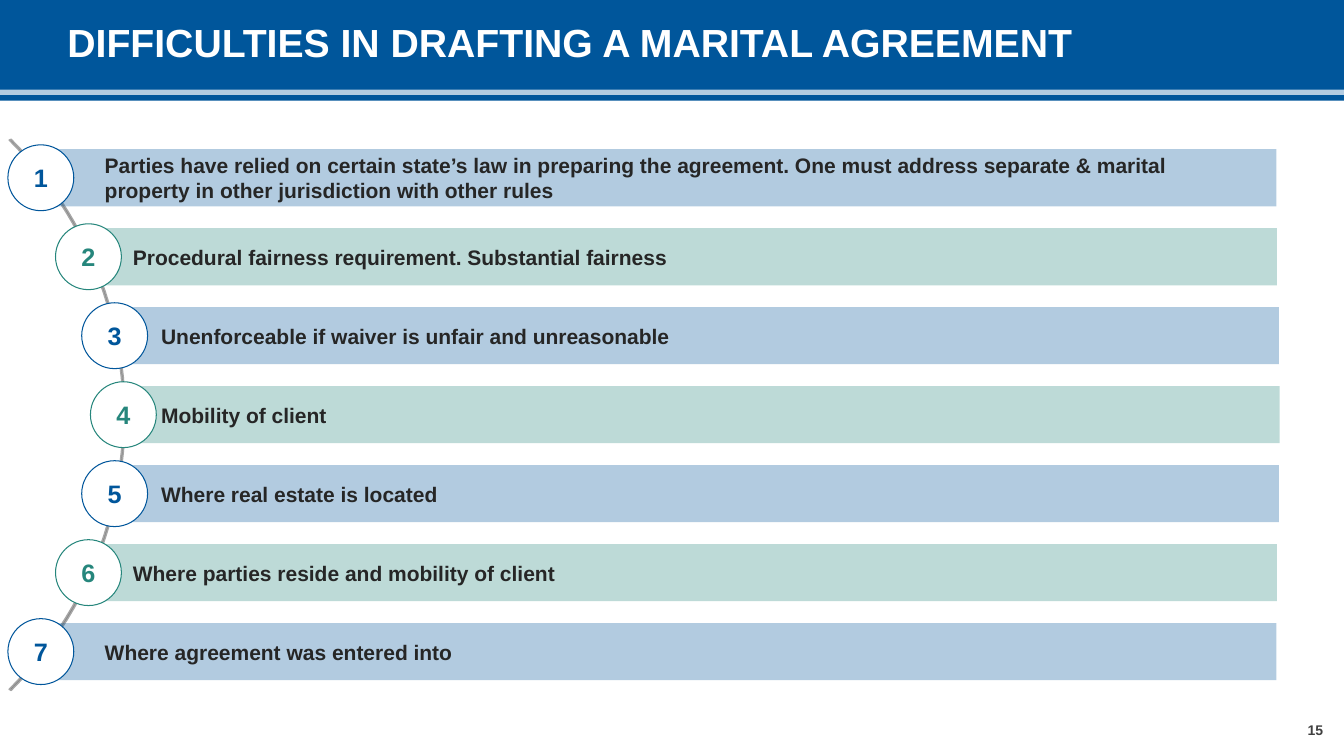
from dataclasses import dataclass
from typing import Any

import lxml.etree
import pptx
import pptx.dml.color
import pptx.enum.shapes
import pptx.enum.text
import pptx.oxml.ns
import pptx.util

Cm = pptx.util.Cm
Pt = pptx.util.Pt
SHAPE = pptx.enum.shapes.MSO_SHAPE
ALIGN = pptx.enum.text.PP_ALIGN
MIDDLE = pptx.enum.text.MSO_ANCHOR.MIDDLE

COLORS = {
    "blue": "00569B",
    "green": "26867C",
    "white": "FFFFFF",
    "ink": "262626",
    "page": "404040",
    "arc": "808080",
    "arc_edge": "A6A6A6",
}

SLIDE_WIDTH, SLIDE_HEIGHT = 33.87, 19.05
FIRST_CENTER, STEP = 4.48, 1.99
BAR_HEIGHT, BADGE_SIZE = 1.44, 1.66
BAR_OPACITY = 30
ARC_STEPS = 48
ARC_OUTER = [(0.28, 3.51), (4.11, 7.34), (4.11, 13.57), (0.28, 17.4)]
ARC_INNER = [(0.23, 17.37), (4.06, 13.54), (4.06, 7.37), (0.23, 3.53)]


@dataclass(frozen=True)
class Indent:
    """Horizontal places, in cm, of one depth along the arc."""
    badge_center: float
    bar_right: float
    text_left: float


@dataclass(frozen=True)
class Difficulty:
    text: str
    indent: Indent
    text_width: float = 28.73


OUTER = Indent(1.03, 32.17, 2.39)
SECOND = Indent(2.23, 32.18, 3.1)
THIRD = Indent(2.89, 32.23, 3.81)
CENTER = Indent(3.11, 32.25, 3.81)

DIFFICULTIES = [
    Difficulty("Parties have relied on certain state’s law in preparing the agreement. "
               "One must address separate & marital property in other jurisdiction "
               "with other rules", OUTER, 29.16),
    Difficulty("Procedural fairness requirement. Substantial fairness", SECOND, 30.3),
    Difficulty("Unenforceable if waiver is unfair and unreasonable", THIRD),
    Difficulty("Mobility of client", CENTER),
    Difficulty("Where real estate is located", THIRD),
    Difficulty("Where parties reside and mobility of client", SECOND),
    Difficulty("Where agreement was entered into", OUTER),
]


def rgb(color: str) -> pptx.dml.color.RGBColor:
    return pptx.dml.color.RGBColor.from_string(COLORS[color])


def apply(target: Any, formats: dict[str, Any]) -> None:
    for attribute, value in formats.items():
        setattr(target, attribute, value)


def paint(shape: Any, color: str, opacity: int = 100) -> None:
    """Fill a shape flat, with no outline and no shadow."""
    shape.shadow.inherit = False
    shape.fill.solid()
    shape.fill.fore_color.rgb = rgb(color)
    shape.line.fill.background()
    if opacity < 100:
        tone = shape.fill._xPr.find(".//" + pptx.oxml.ns.qn("a:srgbClr"))
        lxml.etree.SubElement(tone, pptx.oxml.ns.qn("a:alpha"), val=str(opacity * 1000))


def outline(shape: Any, color: str, width: float) -> None:
    shape.line.color.rgb = rgb(color)
    shape.line.width = Pt(width)


def add_block(slide: Any, kind: Any, left: float, top: float, width: float,
              height: float, color: str, opacity: int = 100) -> Any:
    block = slide.shapes.add_shape(kind, Cm(left), Cm(top), Cm(width), Cm(height))
    paint(block, color, opacity)
    return block


def write(shape: Any, text: str, size: float, color: str,
          frame: dict[str, Any] | None = None,
          paragraph: dict[str, Any] | None = None) -> None:
    text_frame = shape.text_frame
    apply(text_frame, {"word_wrap": True, "vertical_anchor": MIDDLE} | (frame or {}))
    text_frame.text = text
    line = text_frame.paragraphs[0]
    apply(line, paragraph or {})
    apply(line.font, {"name": "Arial", "size": Pt(size), "bold": True})
    line.font.color.rgb = rgb(color)


def add_header(slide: Any) -> None:
    add_block(slide, SHAPE.RECTANGLE, 0, 0, SLIDE_WIDTH, 2.54, "blue")
    add_block(slide, SHAPE.RECTANGLE, 0, 2.26, SLIDE_WIDTH, 0.13, "white", 70)
    title = slide.shapes.title
    slide.shapes._spTree.append(title._element)  # bring the title above its band
    apply(title, {"left": Cm(1.7), "top": Cm(0), "width": Cm(29.85), "height": Cm(2.26)})
    write(title, "DIFFICULTIES IN DRAFTING A MARITAL AGREEMENT", 28, "white",
          {"margin_left": 0, "margin_right": 0,
           "auto_size": pptx.enum.text.MSO_AUTO_SIZE.NONE},
          {"alignment": ALIGN.LEFT, "line_spacing": 0.9})


def curve_points(controls: list[tuple[float, float]]) -> list[tuple[int, int]]:
    """Sample a cubic Bezier curve given in cm."""
    points = []
    for step in range(ARC_STEPS + 1):
        t = step / ARC_STEPS
        weights = ((1 - t) ** 3, 3 * t * (1 - t) ** 2, 3 * t * t * (1 - t), t ** 3)
        x, y = (sum(w * c for w, c in zip(weights, axis)) for axis in zip(*controls))
        points.append((Cm(x), Cm(y)))
    return points


def add_arc(slide: Any) -> None:
    start, *rest = curve_points(ARC_OUTER) + curve_points(ARC_INNER)
    builder = slide.shapes.build_freeform(*start)
    builder.add_line_segments(rest, close=True)
    arc = builder.convert_to_shape()
    paint(arc, "arc")
    outline(arc, "arc_edge", 1)


def add_label(slide: Any, left: float, top: float, width: float, height: float) -> Any:
    return slide.shapes.add_textbox(Cm(left), Cm(top), Cm(width), Cm(height))


def add_difficulty(slide: Any, number: int, item: Difficulty) -> None:
    color = "blue" if number % 2 else "green"
    middle = FIRST_CENTER + (number - 1) * STEP
    center = item.indent.badge_center
    bar_top = middle - BAR_HEIGHT / 2
    add_block(slide, SHAPE.RECTANGLE, center, bar_top,
              item.indent.bar_right - center, BAR_HEIGHT, color, BAR_OPACITY)
    badge = add_block(slide, SHAPE.OVAL, center - BADGE_SIZE / 2,
                      middle - BADGE_SIZE / 2, BADGE_SIZE, BADGE_SIZE, "white")
    outline(badge, color, 0)
    write(badge, str(number), 18, color, paragraph={"alignment": ALIGN.CENTER})
    label = add_label(slide, item.indent.text_left, bar_top, item.text_width, BAR_HEIGHT)
    write(label, item.text, 15, "ink")


def main() -> None:
    deck = pptx.Presentation()
    apply(deck, {"slide_width": Cm(SLIDE_WIDTH), "slide_height": Cm(SLIDE_HEIGHT)})
    slide = deck.slides.add_slide(deck.slide_layouts.get_by_name("Title Only"))
    add_header(slide)
    page_number = add_label(slide, 32.54, 17.75, 1.22, 1.3)
    write(page_number, "15", 10, "page", paragraph={"alignment": ALIGN.CENTER})
    add_arc(slide)
    for number, item in enumerate(DIFFICULTIES, start=1):
        add_difficulty(slide, number, item)
    deck.save("out.pptx")


if __name__ == "__main__":
    main()
